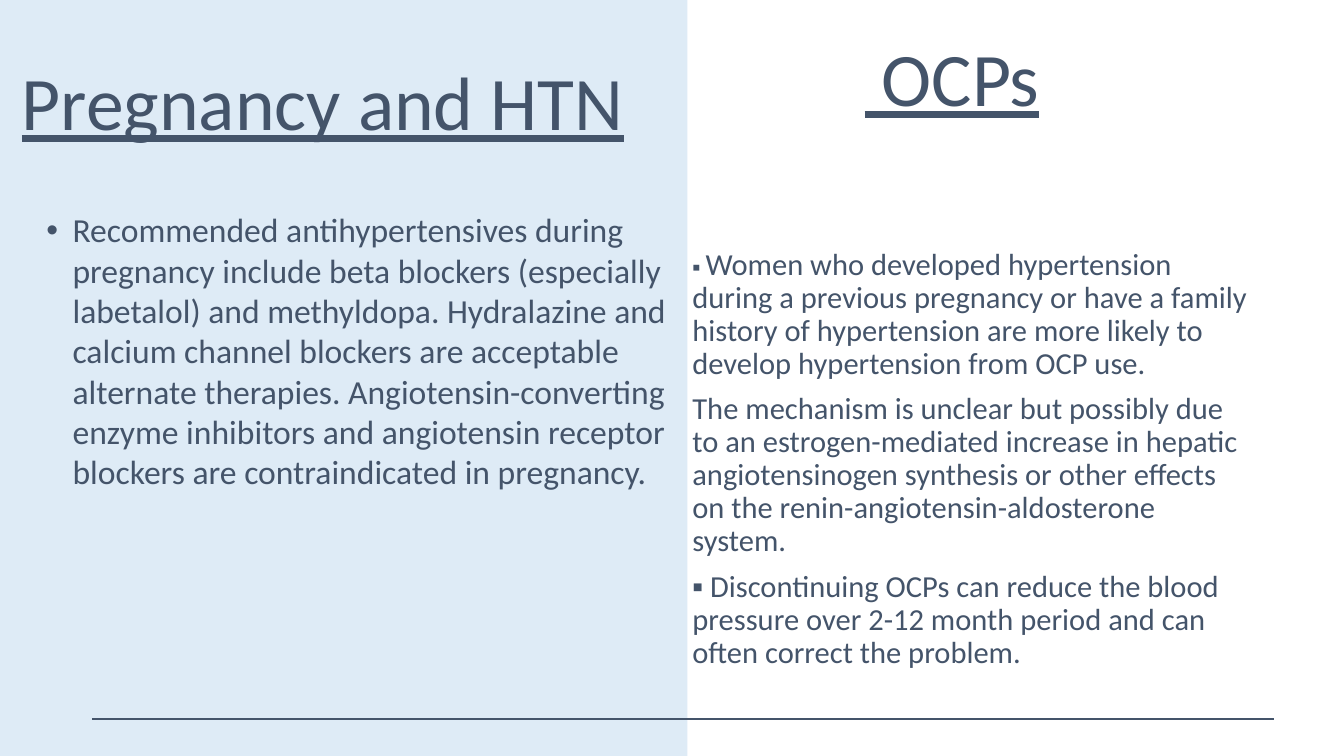
from lxml import etree
from pptx import Presentation
from pptx.dml.color import RGBColor
from pptx.enum.shapes import MSO_CONNECTOR, MSO_SHAPE
from pptx.enum.text import MSO_ANCHOR, MSO_AUTO_SIZE, PP_ALIGN
from pptx.oxml.ns import qn
from pptx.util import Pt

RECTANGLE = MSO_SHAPE.RECTANGLE
STRAIGHT = MSO_CONNECTOR.STRAIGHT
TOP, MIDDLE = MSO_ANCHOR.TOP, MSO_ANCHOR.MIDDLE
NO_AUTOFIT = MSO_AUTO_SIZE.NONE
LEFT = PP_ALIGN.LEFT

COLORS = {"ink": "44546A", "panel": "5B9BD5", "page": "FFFFFF"}
FONT = "Calibri"
INSET = Pt(3.6)


def set_frame(shape, left, top, width, height, anchor):
    shape.left, shape.top = Pt(left), Pt(top)
    shape.width, shape.height = Pt(width), Pt(height)
    frame = shape.text_frame
    frame.word_wrap = True
    frame.auto_size = NO_AUTOFIT
    frame.vertical_anchor = anchor
    frame.margin_left = frame.margin_right = INSET
    frame.margin_top = frame.margin_bottom = INSET
    return frame


def add_run(paragraph, text, size, underline=None):
    paragraph.alignment = LEFT
    run = paragraph.add_run()
    run.text = text
    run.font.name = FONT
    run.font.size = Pt(size)
    run.font.underline = underline
    run.font.color.rgb = RGBColor.from_string(COLORS["ink"])


prs = Presentation()
prs.slide_width, prs.slide_height = Pt(960), Pt(540)
slide = prs.slides.add_slide(prs.slide_layouts[5])
slide.background.fill.solid()
slide.background.fill.fore_color.rgb = RGBColor.from_string(COLORS["page"])

pregnancy_panel = slide.shapes.add_shape(RECTANGLE, Pt(0), Pt(0), Pt(491), Pt(540))
pregnancy_panel.shadow.inherit = False
pregnancy_panel.line.fill.background()
pregnancy_panel.fill.solid()
pregnancy_panel.fill.fore_color.rgb = RGBColor.from_string(COLORS["panel"])
panel_color = pregnancy_panel.fill._xPr.find(qn("a:solidFill"))[0]
etree.SubElement(panel_color, qn("a:alpha"), val="20000")

ocp_heading = set_frame(slide.shapes.title, 614, 19.5, 247, 78.5, MIDDLE)
ocp_heading.paragraphs[0].line_spacing = 0.9
add_run(ocp_heading.paragraphs[0], " OCPs", 54, True)

ocp_points = [
    [("▪ ", 16.4),
     ("Women who developed hypertension during a previous pregnancy or have a "
      "family history of hypertension are more likely to develop hypertension "
      "from OCP use.", 21.8)],
    [("The mechanism is unclear but possibly due to an estrogen-mediated "
      "increase in hepatic angiotensinogen synthesis or other effects on the "
      "renin-angiotensin-aldosterone system.", 21.8)],
    [("▪ Discontinuing OCPs can reduce the blood pressure over 2-12 month "
      "period and can often correct the problem.", 21.8)],
]
ocp_box = slide.shapes.add_textbox(0, 0, 0, 0)
ocp_text = set_frame(ocp_box, 491, 142, 407.5, 372, MIDDLE)
for index, point in enumerate(ocp_points):
    paragraph = ocp_text.add_paragraph() if index else ocp_text.paragraphs[0]
    paragraph.line_spacing = 0.9
    if index:
        paragraph.space_before = Pt(9)
    for text, size in point:
        add_run(paragraph, text, size)

footer_rule = slide.shapes.add_connector(STRAIGHT, Pt(910), Pt(513.5), Pt(66), Pt(513.5))
footer_rule.line.color.rgb = RGBColor.from_string(COLORS["ink"])
footer_rule.line.width = Pt(1)
etree.SubElement(footer_rule._element.spPr, qn("a:effectLst"))

pregnancy_heading_box = slide.shapes.add_textbox(0, 0, 0, 0)
pregnancy_heading = set_frame(pregnancy_heading_box, 12, 36, 475, 63, TOP)
add_run(pregnancy_heading.paragraphs[0], "Pregnancy and HTN", 54, True)

pregnancy_box = slide.shapes.add_textbox(0, 0, 0, 0)
pregnancy_text = set_frame(pregnancy_box, 29.5, 146, 458, 205, TOP)
advice = pregnancy_text.paragraphs[0]
advice_format = advice._p.get_or_add_pPr()
advice_format.set("marL", str(Pt(18.75)))
advice_format.set("indent", str(-Pt(18.75)))
etree.SubElement(advice_format, qn("a:buFont"), typeface="Arial")
etree.SubElement(advice_format, qn("a:buChar"), char="•")
add_run(
    advice,
    "Recommended antihypertensives during pregnancy include beta blockers "
    "(especially labetalol) and methyldopa. Hydralazine and calcium channel "
    "blockers are acceptable alternate therapies. Angiotensin-converting enzyme "
    "inhibitors and angiotensin receptor blockers are contraindicated in pregnancy.",
    24,
)

prs.save("out.pptx")
